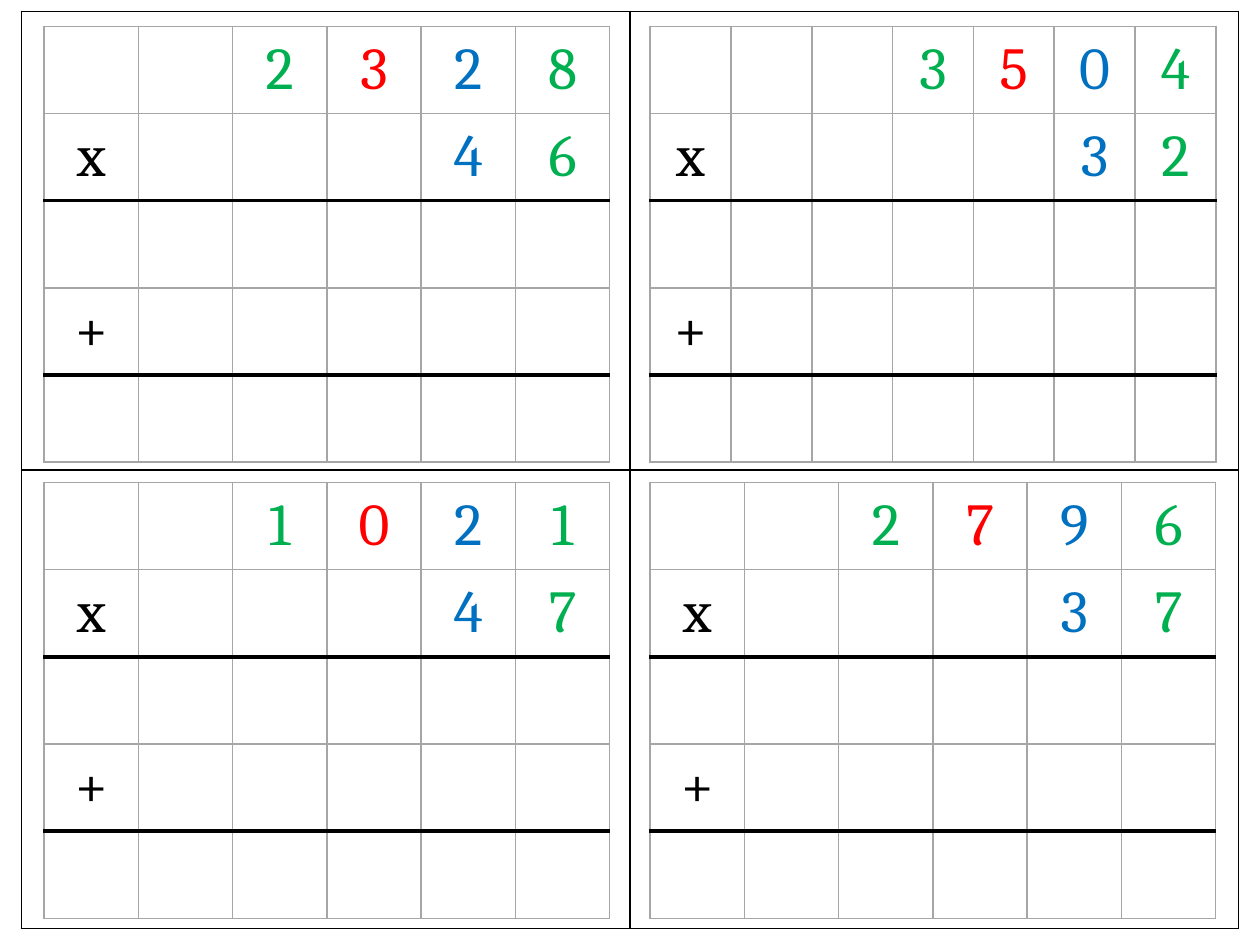
"""Build a worksheet of four long multiplication grids."""
from lxml.etree import SubElement
from pptx import Presentation
from pptx.dml.color import RGBColor as Color
from pptx.enum.text import MSO_ANCHOR as Anchor, PP_ALIGN as Align
from pptx.oxml.ns import qn
from pptx.util import Inches, Pt

BLACK = Color(0x00, 0x00, 0x00)
WHITE = Color(0xFF, 0xFF, 0xFF)
GREY = Color(0xA6, 0xA6, 0xA6)
GREEN = Color(0x00, 0xB0, 0x50)
BLUE = Color(0x00, 0x70, 0xC0)
RED = Color(0xFF, 0x00, 0x00)
PLACES = (GREEN, BLUE, RED, GREEN)
THIN = (GREY, 1)
BOLD = (BLACK, 2.25)
FRAME = (BLACK, 1)
SUMS = (
    ("2328", "46", 6, 0.35, 0.21),
    ("3504", "32", 7, 5.16, 0.21),
    ("1021", "47", 6, 0.35, 3.83),
    ("2796", "37", 6, 5.16, 3.83),
)


def edge(cell, side, color, width):
    props = cell._tc.get_or_add_tcPr()
    line = SubElement(props, qn(f"a:ln{side}"), w=str(Pt(width)))
    fill = SubElement(line, qn("a:solidFill"))
    SubElement(fill, qn("a:srgbClr"), val=str(color))


def style(cell, top, bottom, side):
    for name, line in zip("LRTB", (side, side, top, bottom)):
        edge(cell, name, *line)
    cell.fill.solid()
    cell.fill.fore_color.rgb = WHITE


def write(cell, text, color=BLACK, size=34, font="Cambria"):
    cell.vertical_anchor = Anchor.MIDDLE
    para = cell.text_frame.paragraphs[0]
    para.alignment = Align.CENTER
    run = para.add_run()
    run.text = text
    run.font.size = Pt(size)
    run.font.name = font
    run.font.color.rgb = color


def grid(slide, rows, cols, left, top, width, height):
    box = [Inches(n) for n in (left, top, width, height)]
    table = slide.shapes.add_table(rows, cols, *box).table
    table.first_row = table.horz_banding = False
    for col in table.columns:
        col.width = Inches(width / cols)
    for row in table.rows:
        row.height = Inches(height / rows)
    return table


def frame(slide):
    table = grid(slide, 2, 2, 0.17, 0.09, 9.66, 7.28)
    for cell in table.iter_cells():
        style(cell, FRAME, FRAME, FRAME)


def digits(table, row, number):
    last = len(table.columns) - 1
    for place, digit in enumerate(reversed(number)):
        write(table.cell(row, last - place), digit, color=PLACES[place])


def multiply(slide, upper, lower, cols, left, top):
    table = grid(slide, 5, cols, left, top, 4.49, 3.46)
    for row in range(5):
        over = BOLD if row in (2, 4) else THIN
        under = BOLD if row in (1, 3) else THIN
        for col in range(cols):
            style(table.cell(row, col), over, under, THIN)
    digits(table, 0, upper)
    digits(table, 1, lower)
    write(table.cell(1, 0), "x")
    write(table.cell(3, 0), "+")


def main():
    deck = Presentation()
    deck.slide_width, deck.slide_height = Inches(10), Inches(7.5)
    slide = deck.slides.add_slide(deck.slide_layouts[6])
    frame(slide)
    for item in SUMS:
        multiply(slide, *item)
    deck.save("out.pptx")


if __name__ == "__main__":
    main()
